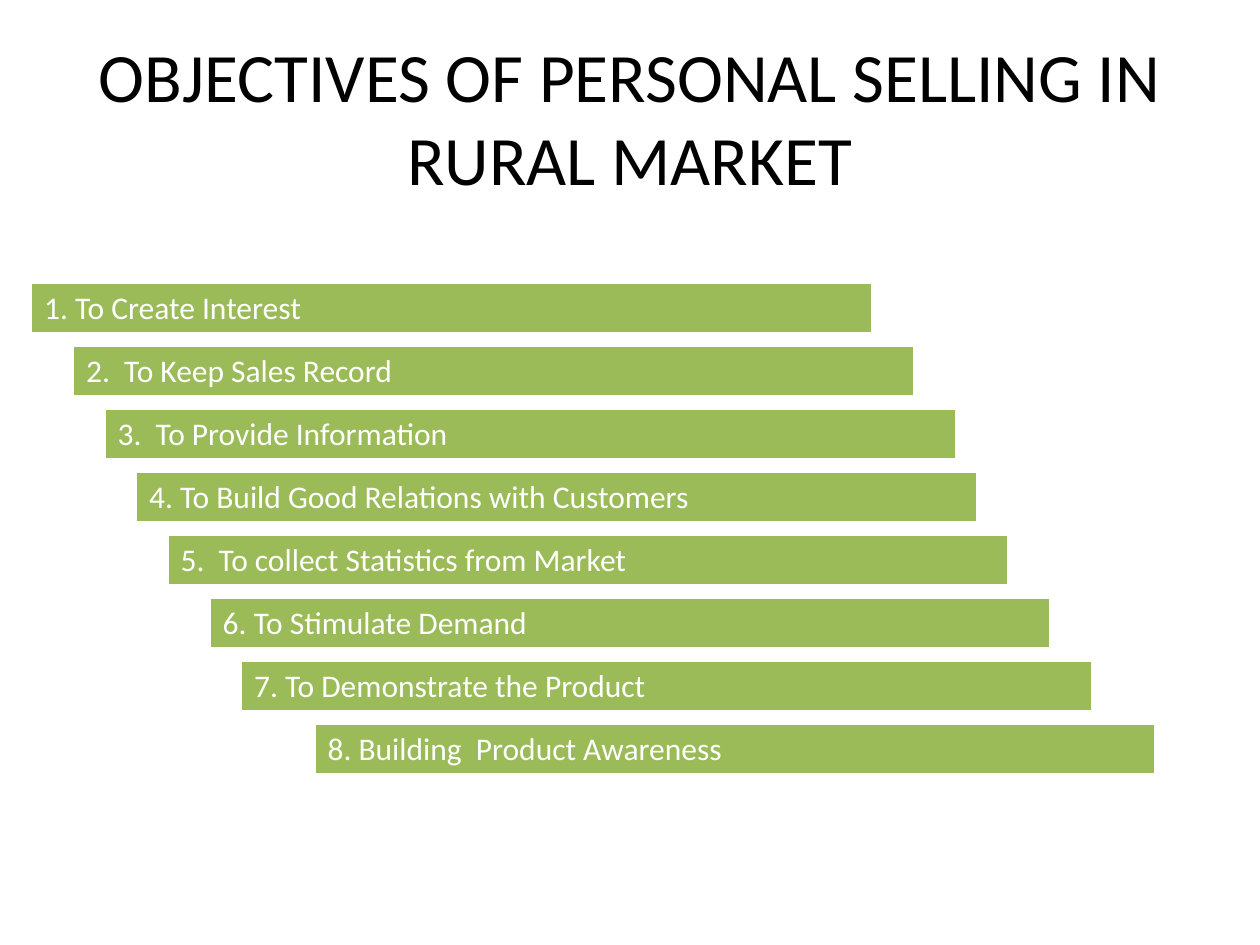
from lxml.etree import SubElement
from pptx import Presentation
from pptx.dml.color import RGBColor
from pptx.enum.text import MSO_ANCHOR, MSO_AUTO_SIZE, PP_ALIGN
from pptx.oxml.ns import qn
from pptx.util import Inches, Pt

FONT = "Calibri"
BLACK, WHITE, GREEN = "000000", "FFFFFF", "9BBB59"

# The steps sit on a grid of twelfths of an inch across, half inches down
COLUMN = 1 / 12
ROW = 0.5
FIRST_TOP = 2.25
BAR_HEIGHT = 0.4
BORDERS = {"a:lnL": 1, "a:lnR": 1, "a:lnT": 1, "a:lnB": 3}

# Wording, first column, number of columns
OBJECTIVES = [
    ("1. To Create Interest", 3, 80),
    ("2.  To Keep Sales Record", 7, 80),
    ("3.  To Provide Information", 10, 81),
    ("4. To Build Good Relations with Customers", 13, 80),
    ("5.  To collect Statistics from Market", 16, 80),
    ("6. To Stimulate Demand", 20, 80),
    ("7. To Demonstrate the Product", 23, 81),
    ("8. Building  Product Awareness", 30, 80),
]


def color(value):
    return RGBColor.from_string(value)


def add_run(paragraph, text, size, font_color):
    run = paragraph.add_run()
    run.text = text
    run.font.name = FONT
    run.font.size = Pt(size)
    run.font.color.rgb = color(font_color)


def add_title(slide, text):
    title = slide.shapes.title
    title.left, title.top = Inches(0.5), Inches(0.3)
    title.width, title.height = Inches(9), Inches(1.25)
    frame = title.text_frame
    frame.word_wrap = True
    frame.auto_size = MSO_AUTO_SIZE.NONE
    frame.vertical_anchor = MSO_ANCHOR.MIDDLE
    paragraph = frame.paragraphs[0]
    paragraph.alignment = PP_ALIGN.CENTER
    add_run(paragraph, text, 39.6, BLACK)


def set_borders(cell, border_color):
    """Draw the cell's edges; they must stand before the fill in the XML."""
    properties = cell._tc.get_or_add_tcPr()
    for position, (tag, width) in enumerate(BORDERS.items()):
        line = SubElement(properties, qn(tag), w=str(Pt(width)))
        fill = SubElement(line, qn("a:solidFill"))
        SubElement(fill, qn("a:srgbClr"), val=border_color)
        properties.insert(position, line)


def add_step(slide, index, text, first_column, columns):
    """Add one objective as a single-cell table."""
    frame = slide.shapes.add_table(
        1, 1,
        Inches(first_column * COLUMN), Inches(FIRST_TOP + index * ROW),
        Inches(columns * COLUMN), Inches(BAR_HEIGHT),
    )
    table = frame.table
    table.first_row = False
    table.horz_banding = False
    cell = table.cell(0, 0)
    cell.fill.solid()
    cell.fill.fore_color.rgb = color(GREEN)
    set_borders(cell, WHITE)
    add_run(cell.text_frame.paragraphs[0], text, 18, WHITE)


def main():
    presentation = Presentation()
    presentation.slide_width = Inches(10)
    presentation.slide_height = Inches(7.5)
    title_only = presentation.slide_layouts[5]
    slide = presentation.slides.add_slide(title_only)

    # Heading
    add_title(slide, "OBJECTIVES OF PERSONAL SELLING IN RURAL MARKET")

    # Staircase of objectives
    for index, (text, first_column, columns) in enumerate(OBJECTIVES):
        add_step(slide, index, text, first_column, columns)

    presentation.save("out.pptx")


if __name__ == "__main__":
    main()
